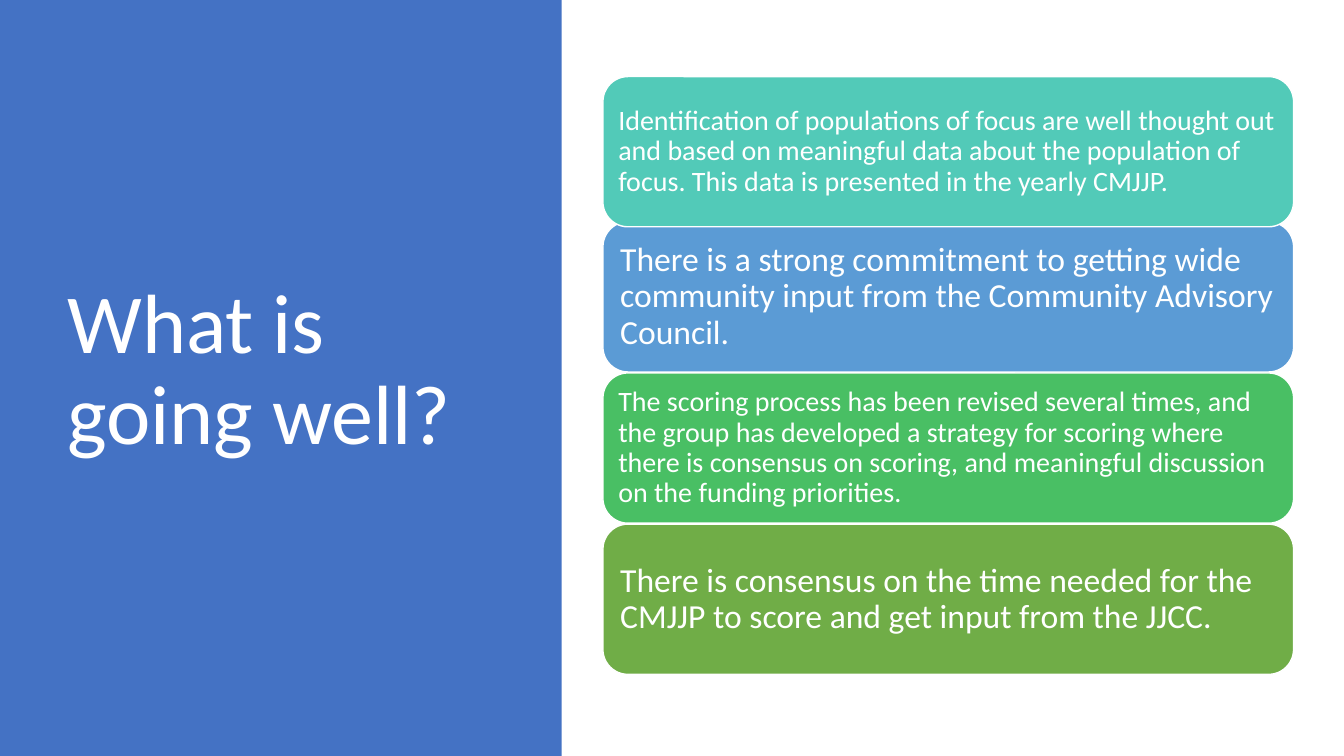
from pptx import Presentation
from pptx.dml.color import RGBColor
from pptx.enum.shapes import MSO_SHAPE
from pptx.enum.text import MSO_ANCHOR, PP_ALIGN
from pptx.util import Inches, Pt

RECTANGLE = MSO_SHAPE.RECTANGLE
ROUNDED_RECTANGLE = MSO_SHAPE.ROUNDED_RECTANGLE
MIDDLE = MSO_ANCHOR.MIDDLE
LEFT = PP_ALIGN.LEFT

WHITE = RGBColor(0xFF, 0xFF, 0xFF)
PANEL_BLUE = RGBColor(0x44, 0x72, 0xC4)
SKY_BLUE = RGBColor(0x5B, 0x9B, 0xD5)
TEAL = RGBColor(0x52, 0xCA, 0xB8)
GREEN = RGBColor(0x49, 0xBF, 0x64)
OLIVE = RGBColor(0x70, 0xAD, 0x47)

FONT = "Calibri"
SLIDE_WIDTH, SLIDE_HEIGHT = 13.33, 7.5
CARD_HEIGHT = 1.49

# Top within the list, fill, text size and inset, text; the teal card overlaps the blue one.
CARDS = [
    (1.44, SKY_BLUE, 24, 0.1,
     "There is a strong commitment to getting wide community input from the "
     "Community Advisory Council."),
    (0, TEAL, 20, 0.08,
     "Identification of populations of focus are well thought out and based on "
     "meaningful data about the population of focus. This data is presented in "
     "the yearly CMJJP."),
    (2.94, GREEN, 20, 0.08,
     "The scoring process has been revised several times, and the group has "
     "developed a strategy for scoring where there is consensus on scoring, and "
     "meaningful discussion on the funding priorities."),
    (4.44, OLIVE, 24, 0.1,
     "There is consensus on the time needed for the CMJJP to score and get input "
     "from the JJCC."),
]


def set_attributes(target, values):
    for name, value in values.items():
        setattr(target, name, value)


def add_filled_shape(slide, kind, box, color):
    shape = slide.shapes.add_shape(kind, *map(Inches, box))
    shape.shadow.inherit = False
    shape.fill.solid()
    shape.fill.fore_color.rgb = color
    return shape


def write_text(shape, text, size, side_inset, vertical_inset):
    frame = shape.text_frame
    set_attributes(frame, {
        "word_wrap": True,
        "vertical_anchor": MIDDLE,
        "margin_left": Inches(side_inset),
        "margin_right": Inches(side_inset),
        "margin_top": Inches(vertical_inset),
        "margin_bottom": Inches(vertical_inset),
    })
    paragraph = frame.paragraphs[0]
    set_attributes(paragraph, {"alignment": LEFT, "line_spacing": 0.9})
    run = paragraph.add_run()
    run.text = text
    set_attributes(run.font, {"name": FONT, "size": Pt(size)})
    run.font.color.rgb = WHITE


def add_title_panel(slide, left, top, width, height):
    panel = add_filled_shape(slide, RECTANGLE, (left, top, width, height), PANEL_BLUE)
    panel.line.fill.background()
    title_box = (left + 0.57, top + 0.68, width - 1.41, height - 1.48)
    title = slide.shapes.add_textbox(*map(Inches, title_box))
    write_text(title, "What is going well?", 60, 0.1, 0.05)


def add_card_list(slide, left, top, width):
    for offset, color, size, inset, text in CARDS:
        box = (left, top + offset, width, CARD_HEIGHT)
        card = add_filled_shape(slide, ROUNDED_RECTANGLE, box, color)
        card.line.color.rgb = WHITE
        card.line.width = Pt(1)
        write_text(card, text, size, inset, inset)


def main():
    presentation = Presentation()
    presentation.slide_width = Inches(SLIDE_WIDTH)
    presentation.slide_height = Inches(SLIDE_HEIGHT)
    slide = presentation.slides.add_slide(presentation.slide_layouts[6])
    add_title_panel(slide, 0, 0, 5.57, SLIDE_HEIGHT)
    add_card_list(slide, 5.98, 0.76, 6.85)
    presentation.save("out.pptx")


if __name__ == "__main__":
    main()
